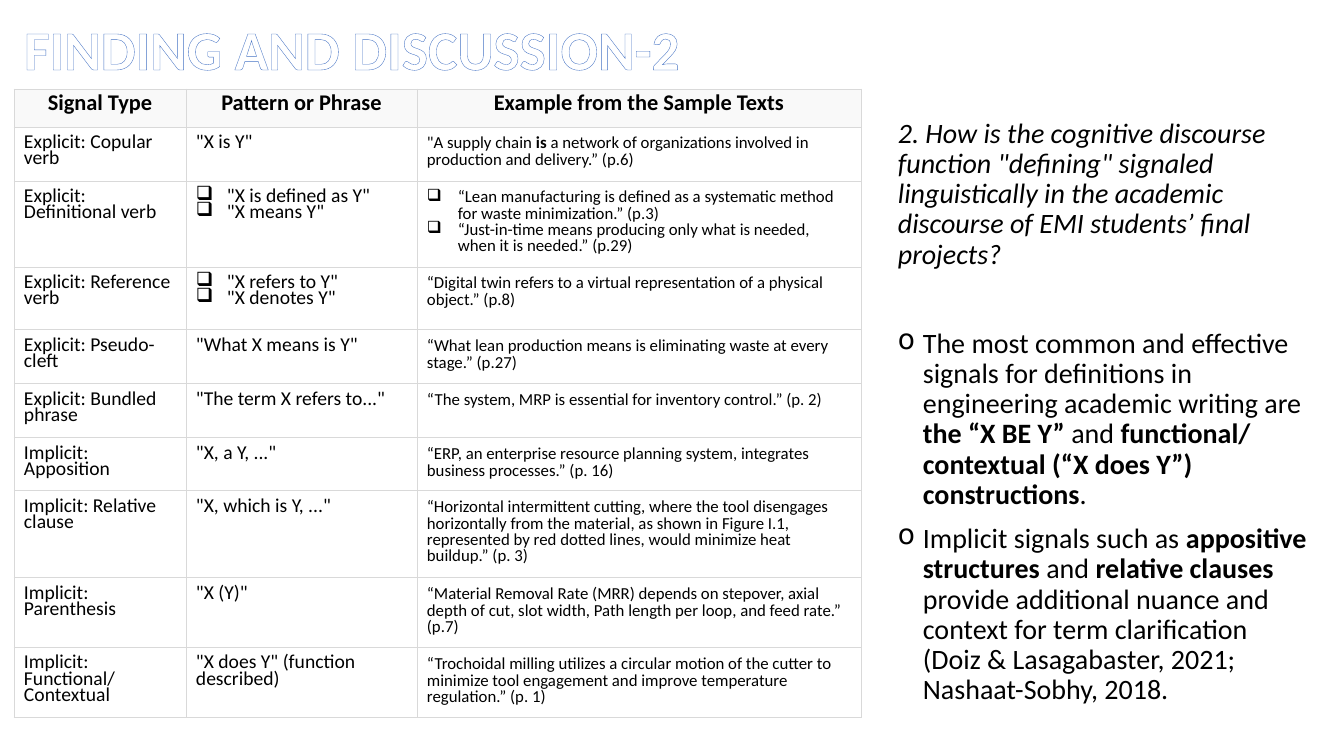
from dataclasses import dataclass

from lxml import etree
from pptx import Presentation
from pptx import util as u
from pptx.dml.color import RGBColor
from pptx.enum import text as t
from pptx.oxml import ns

EMU_PER_PX = 914400 / 100.8


@dataclass(frozen=True)
class Theme:
    font: str = "Calibri"
    ink: str = "000000"
    paper: str = "FFFFFF"
    header_fill: str = "F9F9F9"
    grid: str = "D9D9D9"
    outline: str = "4472C4"
    title_size: float = 39.6
    panel_size: float = 20
    header_size: float = 16
    label_size: float = 14
    example_size: float = 12


@dataclass(frozen=True)
class Signal:
    """One table row; several lines in pattern or example form a bulleted list."""
    height: int
    kind: str
    pattern: str
    example: str


@dataclass(frozen=True)
class Point:
    text: str
    bullet: str = ""
    italic: bool = False
    space_before: float = 10


THEME = Theme()
TABLE_LEFT, TABLE_TOP = 14, 89
COLUMN_WIDTHS = (172, 231, 444)
TABLE_BULLET, TABLE_INDENT = "❑", 31
PANEL_INDENT = 25
TABLE_LEADING = u.Pt(11.7)

HEADER = Signal(38, "**Signal Type**", "**Pattern or Phrase**", "**Example from the Sample Texts**")
SIGNALS = (
    Signal(54, "Explicit: Copular verb", '"X is Y"',
           '"A supply chain **is** a network of organizations involved in production and delivery.” (p.6)'),
    Signal(86, "Explicit: Definitional verb", '"X is defined as Y"\n"X means Y"',
           "“Lean manufacturing is defined as a systematic method for waste minimization.” (p.3)\n"
           "“Just-in-time means producing only what is needed, when it is needed.” (p.29)"),
    Signal(63, "Explicit: Reference verb", '"X refers to Y"\n"X denotes Y"',
           "“Digital twin refers to a virtual representation of a physical object.” (p.8)"),
    Signal(54, "Explicit: Pseudo-cleft", '"What X means is Y"',
           "“What lean production means is eliminating waste at every stage.” (p.27)"),
    Signal(54, "Explicit: Bundled phrase", '"The term X refers to..."',
           "“The system, MRP is essential for inventory control.” (p. 2)"),
    Signal(53, "Implicit: Apposition", '"X, a Y, ..."',
           "“ERP, an enterprise resource planning system, integrates business processes.” (p. 16)"),
    Signal(87, "Implicit: Relative clause", '"X, which is Y, ..."',
           "“Horizontal intermittent cutting, where the tool disengages horizontally from the material, "
           "as shown in Figure I.1, represented by red dotted lines, would minimize heat buildup.” (p. 3)"),
    Signal(70, "Implicit: Parenthesis", '"X (Y)"',
           "“Material Removal Rate (MRR) depends on stepover, axial depth of cut, slot width, "
           "Path length per loop, and feed rate.” (p.7)"),
    Signal(70, "Implicit: Functional/\nContextual", '"X does Y" (function described)',
           "“Trochoidal milling utilizes a circular motion of the cutter to minimize tool engagement "
           "and improve temperature regulation.” (p. 1)"),
)
POINTS = (
    Point('2. How is the cognitive discourse function "defining" signaled linguistically in the '
          "academic discourse of EMI students’ final projects?", italic=True, space_before=0),
    Point("The most common and effective signals for definitions in engineering academic writing are "
          "**the “X BE Y” **and **functional/ contextual (“X does Y”) constructions**.",
          bullet="o", space_before=42),
    Point("Implicit signals such as **appositive structures** and **relative clauses **provide "
          "additional nuance and context for term clarification (Doiz & Lasagabaster, 2021; "
          "Nashaat-Sobhy, 2018.", bullet="o"),
)


def px(length: float) -> u.Emu:
    return u.Emu(round(length * EMU_PER_PX))


def rgb(colour: str) -> RGBColor:
    return RGBColor.from_string(colour)


def line_xml(tag: str, colour: str, width: float):
    line = etree.Element(ns.qn(tag), w=str(u.Pt(width)))
    fill = etree.SubElement(line, ns.qn("a:solidFill"))
    etree.SubElement(fill, ns.qn("a:srgbClr"), val=colour)
    return line


def add_bullet(paragraph, character: str, indent: int) -> None:
    properties = paragraph._p.get_or_add_pPr()
    properties.set("marL", str(px(indent)))
    properties.set("indent", str(-px(indent)))
    etree.SubElement(properties, ns.qn("a:buChar"), char=character)


def write(paragraph, marked: str, size: float, colour: str = THEME.ink, italic: bool = False) -> None:
    """Fill a paragraph; words between double asterisks become bold."""
    for index, words in enumerate(marked.split("**")):
        if words:
            run = paragraph.add_run()
            run.text = words
            font = run.font
            font.name, font.size = THEME.font, u.Pt(size)
            font.bold, font.italic = index % 2 == 1, italic
            font.color.rgb = rgb(colour)


def place(shape, left: int, top: int, width: int, height: int) -> None:
    shape.left, shape.top, shape.width, shape.height = map(px, (left, top, width, height))


def draw_title(title) -> None:
    place(title, 14, 20, 1159, 64)
    frame = title.text_frame
    frame.auto_size = t.MSO_AUTO_SIZE.NONE
    frame.vertical_anchor = t.MSO_ANCHOR.MIDDLE
    heading = frame.paragraphs[0]
    heading.alignment, heading.line_spacing = t.PP_ALIGN.LEFT, 0.9
    write(heading, "**FINDING AND DISCUSSION-2**", THEME.title_size, THEME.paper)
    heading.runs[0].font._element.insert(0, line_xml("a:ln", THEME.outline, 0.8))


def draw_cell(cell, content: str, size: float, fill: str, is_header: bool, bulleted: bool) -> None:
    cell.fill.solid()
    cell.fill.fore_color.rgb = rgb(fill)
    cell.margin_left = cell.margin_right = cell.margin_top = cell.margin_bottom = px(10)
    cell.vertical_anchor = t.MSO_ANCHOR.MIDDLE if is_header else t.MSO_ANCHOR.TOP
    for index, side in enumerate(("a:lnL", "a:lnR", "a:lnT", "a:lnB")):
        cell._tc.get_or_add_tcPr().insert(index, line_xml(side, THEME.grid, 0.75))
    frame = cell.text_frame
    frame.word_wrap = True
    for index, line in enumerate(content.split("\n")):
        paragraph = frame.add_paragraph() if index else frame.paragraphs[0]
        if bulleted:
            add_bullet(paragraph, TABLE_BULLET, TABLE_INDENT)
        paragraph.alignment = t.PP_ALIGN.CENTER if is_header else t.PP_ALIGN.LEFT
        paragraph.line_spacing = TABLE_LEADING
        write(paragraph, line, size)


def draw_signal_table(slide) -> None:
    signals = (HEADER, *SIGNALS)
    height = sum(signal.height for signal in signals)
    table = slide.shapes.add_table(len(signals), len(COLUMN_WIDTHS), px(TABLE_LEFT), px(TABLE_TOP),
                                   px(sum(COLUMN_WIDTHS)), px(height)).table
    table.horz_banding = False
    for column, width in zip(table.columns, COLUMN_WIDTHS):
        column.width = px(width)
    body_sizes = (THEME.label_size, THEME.label_size, THEME.example_size)
    for row, signal in zip(table.rows, signals):
        row.height = px(signal.height)
        is_header = signal is HEADER
        sizes = (THEME.header_size,) * 3 if is_header else body_sizes
        fill = THEME.header_fill if is_header else THEME.paper
        contents = (signal.kind, signal.pattern, signal.example)
        for column, (cell, content, size) in enumerate(zip(row.cells, contents, sizes)):
            draw_cell(cell, content, size, fill, is_header, bulleted=column > 0 and "\n" in content)


def draw_findings(slide) -> None:
    panel = slide.shapes.add_textbox(px(888), px(114), px(432), px(603))
    panel.fill.solid()
    panel.fill.fore_color.rgb = rgb(THEME.paper)
    paper = panel._element.spPr.find(".//" + ns.qn("a:srgbClr"))
    etree.SubElement(paper, ns.qn("a:alpha"), val="50000")
    frame = panel.text_frame
    frame.word_wrap = True
    for index, point in enumerate(POINTS):
        paragraph = frame.add_paragraph() if index else frame.paragraphs[0]
        if point.bullet:
            add_bullet(paragraph, point.bullet, PANEL_INDENT)
        paragraph.line_spacing = 0.9
        paragraph.space_before = u.Pt(point.space_before)
        write(paragraph, point.text, THEME.panel_size, italic=point.italic)


def main() -> None:
    deck = Presentation()
    deck.slide_width, deck.slide_height = px(1344), px(756)
    slide = deck.slides.add_slide(deck.slide_layouts.get_by_name("Title Only"))
    draw_title(slide.shapes.title)
    draw_findings(slide)
    draw_signal_table(slide)
    deck.save("out.pptx")


if __name__ == "__main__":
    main()
